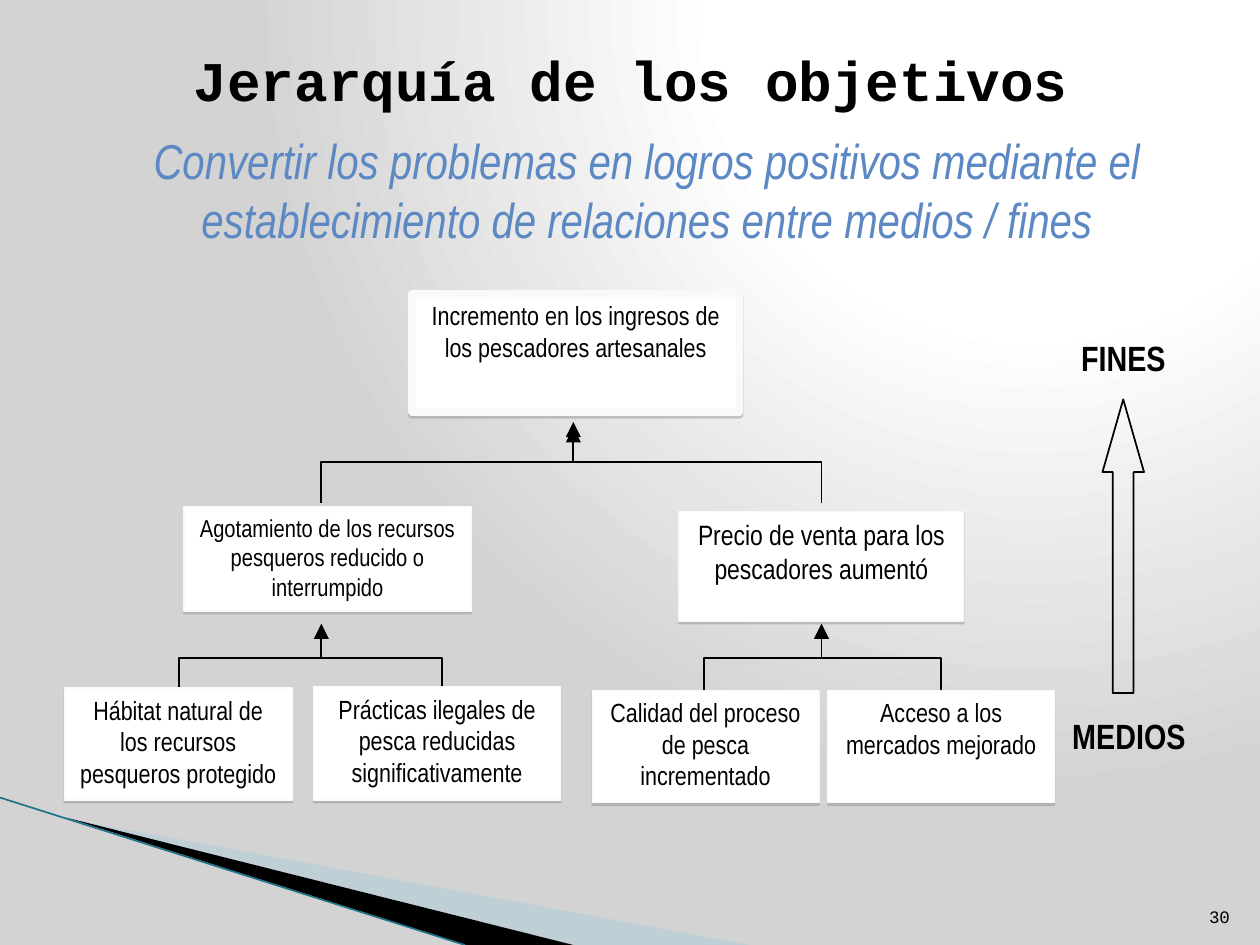
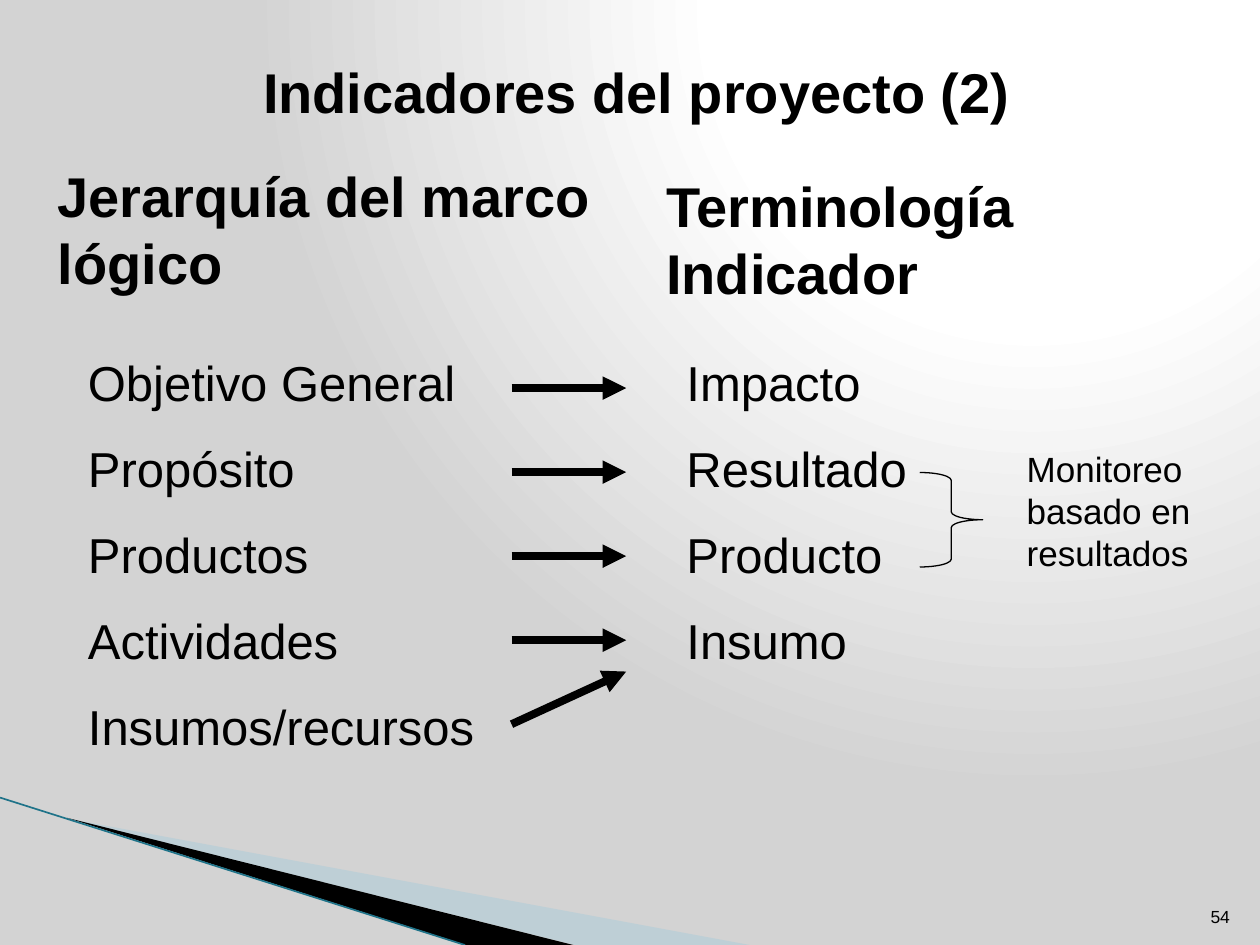
from dataclasses import dataclass
from typing import NamedTuple

from pptx import Presentation
from pptx.dml.color import RGBColor
from pptx.enum.shapes import MSO_CONNECTOR, MSO_SHAPE
from pptx.enum.text import MSO_ANCHOR, PP_ALIGN
from pptx.oxml import parse_xml
from pptx.oxml.ns import nsdecls, qn
from pptx.shapes.autoshape import Shape
from pptx.slide import Slide
from pptx.util import Inches, Pt

# Grid of 100 columns by 75 rows on a 10 x 7.5 inch slide
SLIDE_WIDTH, SLIDE_HEIGHT = Inches(10), Inches(7.5)
COLUMN, ROW = SLIDE_WIDTH / 100, SLIDE_HEIGHT / 75


@dataclass(frozen=True)
class Theme:
    black: str = "000000"
    white: str = "FFFFFF"
    backdrop_edge: str = "D3D3D3"
    pale_band: str = "A0CBDC"
    band_line: str = "1F7389"
    subtitle: str = "5C88C4"
    box_line: str = "F9F9F9"
    box_shadow: str = "808080"
    sans: str = "Arial"
    narrow: str = "Arial Narrow"
    mono: str = "Courier New"
    title_size: float = 32
    body_size: float = 28
    label_size: float = 20
    box_size: float = 15
    number_size: float = 10
    body_gap: float = 15.5


THEME = Theme()


class Point(NamedTuple):
    column: float
    row: float


class Area(NamedTuple):
    column: float
    row: float
    columns: float
    rows: float

    def lengths(self) -> tuple[int, int, int, int]:
        return (round(self.column * COLUMN), round(self.row * ROW),
                round(self.columns * COLUMN), round(self.rows * ROW))


class ObjectiveBox(NamedTuple):
    text: str
    area: Area
    size: float = THEME.box_size
    border: float = 0.75


class Branch(NamedTuple):
    """Bent line from a lower objective, along a shared bar, up to a higher one."""
    child: Point
    bar_row: float
    parent: Point


OBJECTIVE_BOXES = [
    ObjectiveBox("Incremento en los ingresos de los pescadores artesanales",
                 Area(32.7, 23.3, 26, 9.4), border=4.5),
    ObjectiveBox("Agotamiento de los recursos pesqueros reducido o interrumpido",
                 Area(14.6, 40.2, 22.8, 8.3), size=14),
    ObjectiveBox("Hábitat natural de los recursos pesqueros protegido",
                 Area(5.1, 54.6, 18.1, 8.9)),
    ObjectiveBox("Prácticas ilegales de pesca reducidas significativamente",
                 Area(24.9, 54.5, 19.6, 9)),
    ObjectiveBox("Precio de venta para los pescadores aumentó",
                 Area(53.9, 40.6, 22.6, 8.7), size=16),
    ObjectiveBox("Calidad del proceso de pesca incrementado",
                 Area(47, 54.8, 18, 8.9)),
    ObjectiveBox("Acceso a los mercados mejorado",
                 Area(65.7, 54.8, 18, 8.9)),
]

LEFT_PARENT, RIGHT_PARENT, TOP_PARENT = Point(25.5, 50.6), Point(65.2, 50.6), Point(45.5, 34.6)
BRANCHES = [
    Branch(Point(14.2, 54.8), 52.2, LEFT_PARENT),
    Branch(Point(35.1, 54.8), 52.2, LEFT_PARENT),
    Branch(Point(55.9, 54.8), 52.2, RIGHT_PARENT),
    Branch(Point(74.7, 54.8), 52.2, RIGHT_PARENT),
    Branch(Point(25.5, 39.9), 36.7, TOP_PARENT),
    Branch(Point(65.2, 39.9), 36.7, TOP_PARENT),
]
ARROW_TIPS = [Point(25.5, 49.5), Point(65.2, 49.5), Point(45.5, 33.5), Point(45.5, 33.9)]
TIP_SIZE = 1.2

HIERARCHY_LEVELS = ["Objetivo General", "Propósito", "Productos", "Actividades",
                    "Insumos/recursos"]
INDICATOR_TERMS = ["Impacto", "Resultado", "Producto", "Insumo"]


def color(value: str) -> RGBColor:
    return RGBColor.from_string(value)


def write_text(shape: Shape, *lines: str, size: float, font: str = THEME.sans,
               ink: str = THEME.black, bold: bool = False, italic: bool = False,
               align: PP_ALIGN = PP_ALIGN.LEFT, anchor: MSO_ANCHOR = MSO_ANCHOR.TOP,
               gap: float = 0, wrap: bool = True, inset: bool = True) -> None:
    frame = shape.text_frame
    frame.word_wrap = wrap
    frame.vertical_anchor = anchor
    if not inset:
        frame.margin_left = frame.margin_top = frame.margin_right = frame.margin_bottom = 0
    for index, line in enumerate(lines):
        paragraph = frame.add_paragraph() if index else frame.paragraphs[0]
        paragraph.alignment = align
        if index and gap:
            paragraph.space_before = Pt(gap)
        run = paragraph.add_run()
        run.text = line
        run.font.name, run.font.size = font, Pt(size)
        run.font.bold, run.font.italic = bold, italic
        run.font.color.rgb = color(ink)


def add_text(slide: Slide, area: Area, *lines: str, **text_format) -> None:
    write_text(slide.shapes.add_textbox(*area.lengths()), *lines, **text_format)


def style_shape(shape: Shape, fill: str | None = None, line: str | None = None,
                width: float = 1) -> Shape:
    shape.shadow.inherit = False
    if fill:
        shape.fill.solid()
        shape.fill.fore_color.rgb = color(fill)
    else:
        shape.fill.background()
    if line:
        shape.line.color.rgb = color(line)
        shape.line.width = Pt(width)
    else:
        shape.line.fill.background()
    return shape


def add_outline(slide: Slide, points: list[Point], closed: bool = True, **style) -> Shape:
    places = [(round(point.column * COLUMN), round(point.row * ROW)) for point in points]
    builder = slide.shapes.build_freeform(*places[0], scale=1.0)
    builder.add_line_segments(places[1:], close=closed)
    return style_shape(builder.convert_to_shape(), **style)


def add_line(slide: Slide, start: Point, end: Point, line: str, width: float,
             arrow: bool = False) -> None:
    connector = slide.shapes.add_connector(
        MSO_CONNECTOR.STRAIGHT, round(start.column * COLUMN), round(start.row * ROW),
        round(end.column * COLUMN), round(end.row * ROW))
    connector.line.color.rgb = color(line)
    connector.line.width = Pt(width)
    properties = connector.element.spPr
    if arrow:
        properties.find(qn("a:ln")).append(
            parse_xml(f'<a:tailEnd {nsdecls("a")} type="triangle"/>'))
    properties.append(parse_xml(f'<a:effectLst {nsdecls("a")}/>'))


def paint_backdrop(slide: Slide) -> None:
    """Circular gradient, white at the upper right and grey towards the edges."""
    slide.background.fill.solid()
    properties = slide.element.find(".//" + qn("p:bgPr"))
    properties.remove(properties[0])
    stops = "".join(
        f'<a:gs pos="{share * 1000}"><a:srgbClr val="{value}"/></a:gs>'
        for share, value in ((0, THEME.white), (40, THEME.white), (100, THEME.backdrop_edge)))
    properties.insert(0, parse_xml(
        f'<a:gradFill {nsdecls("a")} rotWithShape="1"><a:gsLst>{stops}</a:gsLst>'
        '<a:path path="circle"><a:fillToRect l="65000" t="0" r="0" b="98000"/></a:path>'
        '</a:gradFill>'))


def start_slide(presentation: Presentation) -> Slide:
    """Add a blank slide with the shared backdrop and corner bands."""
    slide = presentation.slides.add_slide(presentation.slide_layouts[6])
    paint_backdrop(slide)
    pale_band = add_outline(
        slide, [Point(5.5, 65), Point(59.5, 75), Point(45.6, 75)], fill=THEME.pale_band)
    pale_band.element.spPr.find(".//" + qn("a:srgbClr")).append(
        parse_xml(f'<a:alpha {nsdecls("a")} val="40000"/>'))
    add_outline(slide, [Point(5.3, 64.9), Point(45.5, 75), Point(37, 75)], fill=THEME.black)
    add_line(slide, Point(0, 63.3), Point(36.9, 75), THEME.band_line, 0.95)
    return slide


def add_title(slide: Slide, area: Area, text: str, font: str) -> None:
    add_text(slide, area, text, size=THEME.title_size, font=font, bold=True,
             align=PP_ALIGN.CENTER, anchor=MSO_ANCHOR.MIDDLE)


def add_slide_number(slide: Slide, number: str, font: str) -> None:
    add_text(slide, Area(94.6, 70.1, 4, 4), number, size=THEME.number_size, font=font,
             align=PP_ALIGN.RIGHT, anchor=MSO_ANCHOR.BOTTOM)


def add_objective_box(slide: Slide, box: ObjectiveBox) -> None:
    shape = slide.shapes.add_shape(MSO_SHAPE.RECTANGLE, *box.area.lengths())
    style_shape(shape, THEME.white, THEME.box_line, box.border)
    shape.element.spPr.find(qn("a:effectLst")).append(parse_xml(
        f'<a:outerShdw {nsdecls("a")} blurRad="0" dist="{Pt(1.6)}" dir="5400000" '
        f'rotWithShape="0"><a:srgbClr val="{THEME.box_shadow}"><a:alpha val="38000"/>'
        '</a:srgbClr></a:outerShdw>'))
    write_text(shape, box.text, size=box.size, font=THEME.narrow, align=PP_ALIGN.CENTER)


def add_branch(slide: Slide, branch: Branch) -> None:
    child, bar_row, parent = branch
    add_outline(slide, [child, Point(child.column, bar_row),
                        Point(parent.column, bar_row), parent],
                closed=False, line=THEME.black)


def add_arrow_tip(slide: Slide, tip: Point) -> None:
    base = tip.row + TIP_SIZE
    add_outline(slide, [tip, Point(tip.column - TIP_SIZE / 2, base),
                        Point(tip.column + TIP_SIZE / 2, base)], fill=THEME.black)


def build_objectives_slide(presentation: Presentation) -> None:
    slide = start_slide(presentation)
    add_title(slide, Area(5.1, 0, 90, 12.5), "Jerarquía de los objetivos", THEME.mono)
    for text, area in (("FINES", Area(85.8, 26.7, 6.8, 3.4)),
                       ("MEDIOS", Area(85.1, 56.7, 9.1, 3.4))):
        add_text(slide, area, text, size=THEME.label_size, font=THEME.narrow, bold=True,
                 wrap=False, inset=False)
    means_to_ends = slide.shapes.add_shape(
        MSO_SHAPE.UP_ARROW, *Area(87.5, 31.7, 3.3, 23.3).lengths())
    means_to_ends.adjustments[0], means_to_ends.adjustments[1] = 0.5, 1.75
    style_shape(means_to_ends, line=THEME.black)
    for branch in BRANCHES:
        add_branch(slide, branch)
    for tip in ARROW_TIPS:
        add_arrow_tip(slide, tip)
    add_text(slide, Area(4.2, 9.9, 94.2, 10.4),
             "Convertir los problemas en logros positivos mediante el "
             "establecimiento de relaciones entre medios / fines",
             size=THEME.body_size, font=THEME.narrow, ink=THEME.subtitle, italic=True,
             align=PP_ALIGN.CENTER)
    for box in OBJECTIVE_BOXES:
        add_objective_box(slide, box)
    add_slide_number(slide, "30", THEME.mono)


def build_indicators_slide(presentation: Presentation) -> None:
    slide = start_slide(presentation)
    add_title(slide, Area(11.4, 2.1, 78.3, 10.2), "Indicadores del proyecto (2)", THEME.sans)
    for heading, area in (("Jerarquía del marco lógico", Area(3.6, 12.3, 48, 11.8)),
                          ("Terminología Indicador", Area(51.9, 13.1, 48, 11.8))):
        add_text(slide, area, heading, size=THEME.title_size, bold=True)
    for terms, area in ((HIERARCHY_LEVELS, Area(6, 27.5, 33.7, 34)),
                        (INDICATOR_TERMS, Area(53.5, 27.5, 21.7, 26.9))):
        add_text(slide, area, *terms, size=THEME.body_size, gap=THEME.body_gap)

    first_row, row_step = 30.8, 6.67
    for index in range(len(HIERARCHY_LEVELS)):
        row = first_row + index * row_step
        end_row = row if index < len(INDICATOR_TERMS) else 53.3
        add_line(slide, Point(40.6, row), Point(49.7, end_row), THEME.black, 4.5, arrow=True)

    brace = slide.shapes.add_shape(MSO_SHAPE.RIGHT_BRACE, *Area(73, 37.5, 5, 7.5).lengths())
    brace.adjustments[0], brace.adjustments[1] = 0.125, 0.5
    style_shape(brace, line=THEME.black, width=0.75)
    add_text(slide, Area(80.5, 35, 17.5, 11.1), "Monitoreo basado en resultados",
             size=THEME.label_size)
    add_slide_number(slide, "54", THEME.sans)


def main() -> None:
    presentation = Presentation()
    presentation.slide_width, presentation.slide_height = SLIDE_WIDTH, SLIDE_HEIGHT
    build_objectives_slide(presentation)
    build_indicators_slide(presentation)
    presentation.save("out.pptx")


if __name__ == "__main__":
    main()
